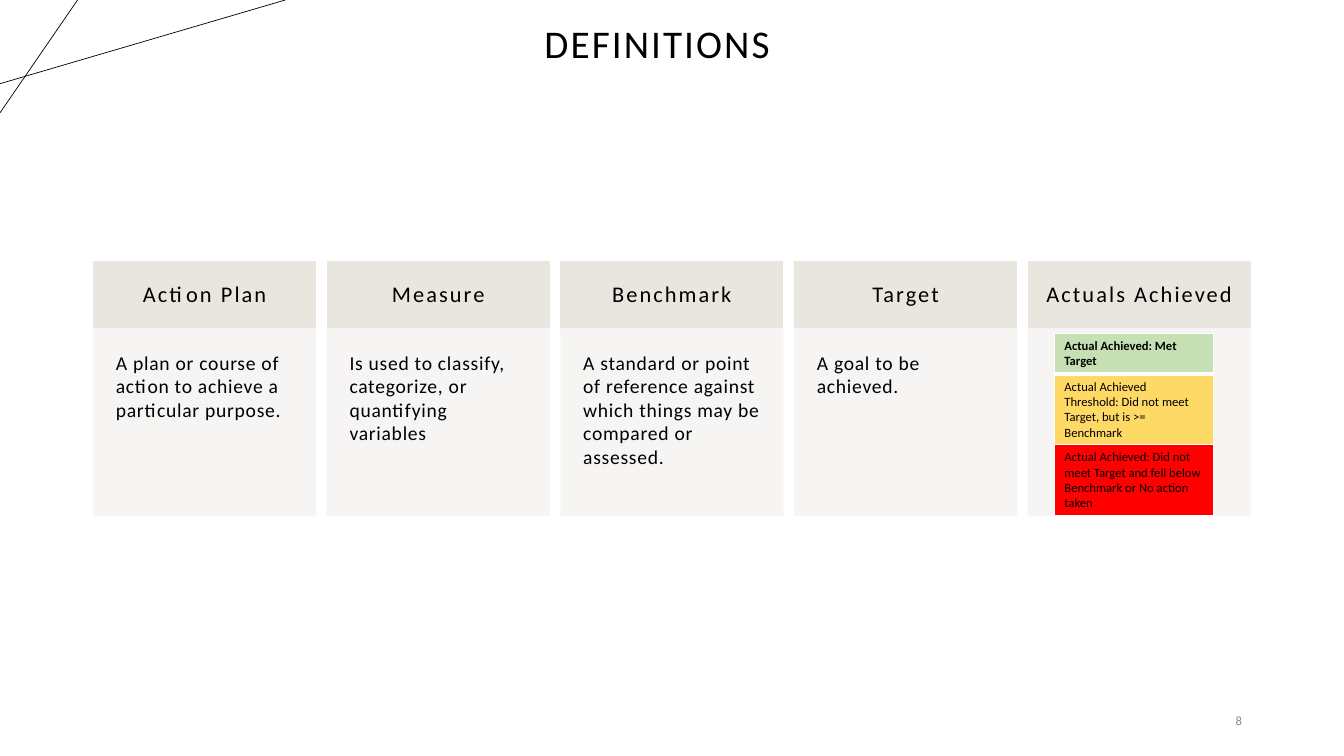
from lxml import etree
from pptx import Presentation
from pptx import util as u
from pptx.dml.color import RGBColor
from pptx.enum import shapes, text
from pptx.oxml import ns

Pt = u.Pt
CENTER, LEFT, RIGHT = text.PP_ALIGN.CENTER, text.PP_ALIGN.LEFT, text.PP_ALIGN.RIGHT
TOP, MIDDLE = text.MSO_ANCHOR.TOP, text.MSO_ANCHOR.MIDDLE

DEFINITIONS = [
    ("Action Plan", "A plan or course of action to achieve a particular purpose."),
    ("Measure", "Is used to classify, categorize, or quantifying variables"),
    ("Benchmark", "A standard or point of reference against which things may be compared or assessed."),
    ("Target", "A goal to be achieved."),
    ("Actuals Achieved", ""),
]
RATINGS = [
    ("Actual Achieved: Met Target", "C5E0B4", 28.8, True),
    ("Actual Achieved Threshold: Did not meet Target, but is >= Benchmark", "FFD966", 50.4, False),
    ("Actual Achieved: Did not meet Target and fell below Benchmark or No action taken", "FF0000", 50.4, False),
]


def rgb(value):
    """Turn a hex string into a colour."""
    return RGBColor.from_string(value)


def assign(obj, values):
    """Set attributes from a dict of format values."""
    for name, value in values.items():
        setattr(obj, name, value)


def write(tf, content, size, align=LEFT, anchor=TOP, color="000000", bold=False,
          spacing=0, line=1.0, inset=None):
    """Write one formatted paragraph into a text frame."""
    assign(tf, {"word_wrap": True, "vertical_anchor": anchor})
    if inset is not None:
        assign(tf, {f"margin_{side}": Pt(inset) for side in ("left", "top", "right", "bottom")})
    p = tf.paragraphs[0]
    assign(p, {"alignment": align, "line_spacing": line})
    r = p.add_run()
    r.text = content
    assign(r.font, {"name": "Calibri", "size": Pt(size), "bold": bold})
    r.font.color.rgb = rgb(color)
    r._r.get_or_add_rPr().set("spc", str(int(spacing * 100)))


def add_line(s, x1, y1, x2, y2):
    """Draw a thin black decorative line."""
    c = s.shapes.add_connector(shapes.MSO_CONNECTOR.STRAIGHT, Pt(x1), Pt(y1), Pt(x2), Pt(y2))
    c.line.color.rgb = rgb("000000")
    c.line.width = Pt(0.5)
    etree.SubElement(c._element.spPr, ns.qn("a:effectLst"))


def add_panel(s, x, y, w, h, color, opacity=100):
    """Draw a flat rectangle with a matching outline."""
    sp = s.shapes.add_shape(shapes.MSO_SHAPE.RECTANGLE, Pt(x), Pt(y), Pt(w), Pt(h))
    sp.shadow.inherit = False
    sp.fill.solid()
    sp.fill.fore_color.rgb = rgb(color)
    sp.line.color.rgb = rgb(color)
    sp.line.width = Pt(1)
    if opacity < 100:
        for clr in sp._element.spPr.iter(ns.qn("a:srgbClr")):
            etree.SubElement(clr, ns.qn("a:alpha"), val=str(opacity * 1000))
    return sp


def add_borders(cell, widths):
    """Give a cell white borders, widths in left, right, top, bottom order."""
    tcPr = cell._tc.get_or_add_tcPr()
    for i, (side, width) in enumerate(zip("LRTB", widths)):
        ln = etree.Element(ns.qn(f"a:ln{side}"), w=str(Pt(width)))
        fill = etree.SubElement(ln, ns.qn("a:solidFill"))
        etree.SubElement(fill, ns.qn("a:srgbClr"), val="FFFFFF")
        tcPr.insert(i, ln)


def add_ratings(s, x, y, w):
    """Add the colour-coded table of achievement ratings."""
    height = sum(row[2] for row in RATINGS)
    table = s.shapes.add_table(len(RATINGS), 1, Pt(x), Pt(y), Pt(w), Pt(height)).table
    assign(table, {"first_row": False, "horz_banding": False})
    for i, (label, color, row_height, bold) in enumerate(RATINGS):
        table.rows[i].height = Pt(row_height)
        cell = table.cell(i, 0)
        cell.fill.solid()
        cell.fill.fore_color.rgb = rgb(color)
        write(cell.text_frame, label, 9, bold=bold)
        add_borders(cell, (1, 1, 3 if i == 1 else 1, 3 if i == 0 else 1))


def add_title(s, content):
    """Place and fill the title placeholder."""
    title = s.shapes.title
    assign(title, {"left": Pt(55.4), "top": Pt(10.8), "width": Pt(828), "height": Pt(43.9)})
    write(title.text_frame, content, 28, CENTER, MIDDLE, spacing=1.5, line=0.9)


def add_definitions(s):
    """Lay out the row of headed definition cards."""
    left, top, pitch, width, head, body = 67, 187.2, 166.9, 158.4, 47.5, 133.2
    for i, (term, meaning) in enumerate(DEFINITIONS):
        x = left + i * pitch
        header = add_panel(s, x, top, width, head, "E9E6DF")
        write(header.text_frame, term, 16, CENTER, MIDDLE, spacing=1.5, line=0.9, inset=12.2)
        card = add_panel(s, x, top + head, width, body, "F7F5F3", 90)
        if meaning:
            write(card.text_frame, meaning, 14, spacing=0.5, inset=15.8)


def main():
    """Build the definitions slide."""
    prs = Presentation()
    assign(prs, {"slide_width": Pt(960), "slide_height": Pt(540)})
    s = prs.slides.add_slide(prs.slide_layouts[5])
    add_line(s, 0, 59.8, 203.8, 0)
    add_line(s, 55.4, 0, 0, 80.6)
    add_title(s, "DEFINITIONS")
    add_definitions(s)
    number = s.shapes.add_textbox(Pt(678.2), Pt(500.4), Pt(216), Pt(28.8))
    write(number.text_frame, "8", 9, RIGHT, MIDDLE, "8C8C8C")
    add_ratings(s, 753.1, 238.3, 113.8)
    prs.save("out.pptx")


if __name__ == "__main__":
    main()
